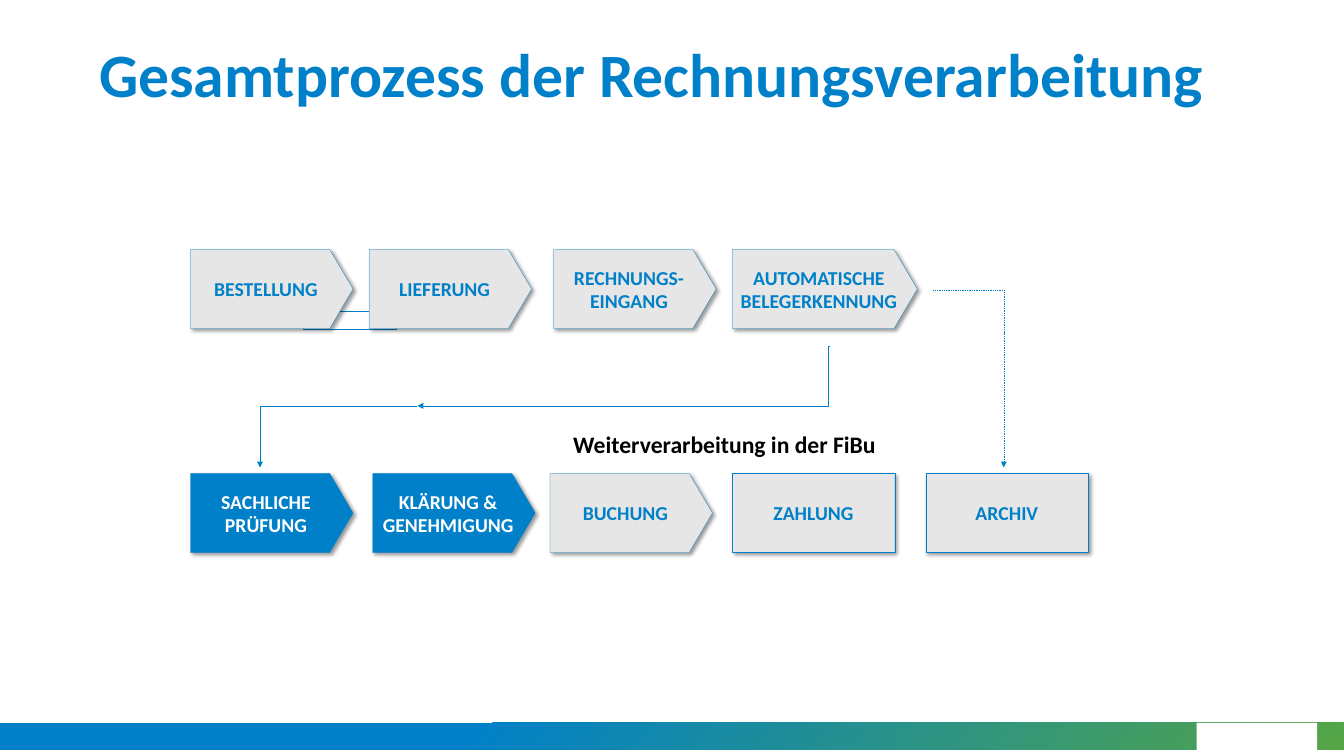
import pptx
import pptx.util
import pptx.dml.color
import pptx.enum.dml
import pptx.enum.shapes
import pptx.enum.text
import pptx.oxml
import pptx.oxml.ns
from pptx.util import Cm

BLUE = pptx.dml.color.RGBColor(0x00, 0x80, 0xC8)
GREEN = pptx.dml.color.RGBColor(0x55, 0xA5, 0x46)
GREY = pptx.dml.color.RGBColor(0xE7, 0xE6, 0xE6)
WHITE = pptx.dml.color.RGBColor(0xFF, 0xFF, 0xFF)
BLACK = pptx.dml.color.RGBColor(0x00, 0x00, 0x00)
SHAPE = pptx.enum.shapes.MSO_SHAPE
ALIGN = pptx.enum.text.PP_ALIGN
ANCHOR = pptx.enum.text.MSO_ANCHOR
NAMESPACE = pptx.oxml.ns.nsdecls("a")
SHADOW = (
    f'<a:outerShdw {NAMESPACE} blurRad="50800" dist="38100" dir="2700000" algn="tl" rotWithShape="0">'
    '<a:srgbClr val="000000"><a:alpha val="40000"/></a:srgbClr></a:outerShdw>'
)

presentation = pptx.Presentation()
presentation.slide_width = Cm(48.16)
presentation.slide_height = Cm(27.1)
slide = presentation.slides.add_slide(presentation.slide_layouts[5])


def add_box(preset, left, top, width, height, fill, line=None):
    shape = slide.shapes.add_shape(preset, Cm(left), Cm(top), Cm(width), Cm(height))
    shape.shadow.inherit = False
    shape.fill.solid()
    shape.fill.fore_color.rgb = fill
    if line is None:
        shape.line.fill.background()
    else:
        shape.line.color.rgb = line
        shape.line.width = pptx.util.Pt(0.25)
    return shape


def write_text(shape, text, size, color, alignment, anchor):
    frame = shape.text_frame
    frame.text = text
    frame.word_wrap = True
    frame.auto_size = pptx.enum.text.MSO_AUTO_SIZE.NONE
    frame.vertical_anchor = anchor
    font_format = {"name": "Calibri", "size": pptx.util.Pt(size), "bold": True}
    for paragraph in frame.paragraphs:
        paragraph.alignment = alignment
        for run in paragraph.runs:
            for attribute, value in font_format.items():
                setattr(run.font, attribute, value)
            run.font.color.rgb = color


# Footer band
footer = add_box(SHAPE.RECTANGLE, 0, 25.91, 48.16, 0.97, BLUE)
footer.fill.gradient()
footer.fill.gradient_angle = 320
for stop, (position, color) in zip(footer.fill.gradient_stops, [(0.35, BLUE), (1, GREEN)]):
    stop.position = position
    stop.color.rgb = color
add_box(SHAPE.RECTANGLE, 42.88, 25.91, 4.32, 0.97, WHITE)

# Title
title = slide.shapes.title
title.left, title.top, title.width, title.height = Cm(3.3), Cm(0), Cm(41.55), Cm(5.23)
write_text(title, "Gesamtprozess der Rechnungsverarbeitung", 62.6, BLUE, ALIGN.LEFT, ANCHOR.MIDDLE)

# Process steps
add_box(SHAPE.RECTANGLE, 10.85, 11.15, 3.35, 0.64, WHITE, BLUE)
UPPER_ROW, LOWER_ROW = 8.94, 16.97
STEP_WIDTH, STEP_HEIGHT = 5.82, 2.84
POINTED, FLAT = 0.295, 0
steps = [
    ("BESTELLUNG", 6.83, UPPER_ROW, STEP_WIDTH, POINTED, GREY, BLUE),
    ("LIEFERUNG", 13.23, UPPER_ROW, STEP_WIDTH, POINTED, GREY, BLUE),
    ("RECHNUNGS-EINGANG", 19.84, UPPER_ROW, STEP_WIDTH, POINTED, GREY, BLUE),
    ("AUTOMATISCHE BELEGERKENNUNG", 26.24, UPPER_ROW, 6.63, POINTED, GREY, BLUE),
    ("SACHLICHE PRÜFUNG", 6.83, LOWER_ROW, STEP_WIDTH, POINTED, BLUE, WHITE),
    ("KLÄRUNG &\nGENEHMIGUNG", 13.36, LOWER_ROW, STEP_WIDTH, POINTED, BLUE, WHITE),
    ("BUCHUNG", 19.71, LOWER_ROW, STEP_WIDTH, POINTED, GREY, BLUE),
    ("ZAHLUNG", 26.24, LOWER_ROW, STEP_WIDTH, FLAT, GREY, BLUE),
    ("ARCHIV", 33.17, LOWER_ROW, STEP_WIDTH, FLAT, GREY, BLUE),
]
for text, left, top, width, point, fill, color in steps:
    step = add_box(SHAPE.PENTAGON, left, top, width, STEP_HEIGHT, fill, BLUE)
    step.adjustments[0] = point
    effects = step.element.spPr.find(pptx.oxml.ns.qn("a:effectLst"))
    effects.append(pptx.oxml.parse_xml(SHADOW))
    write_text(step, text, 20, color, ALIGN.CENTER, ANCHOR.MIDDLE)

# Arrows between the rows: start, end, bend as thousandths of a percent, dashed
arrows = [
    ((33.45, 10.41), (35.97, 16.76), 100100, True),
    ((29.72, 12.42), (14.96, 14.55), 200, False),
    ((14.96, 14.55), (9.32, 16.76), 100100, False),
]
for start, end, bend, dashed in arrows:
    arrow = slide.shapes.add_connector(
        pptx.enum.shapes.MSO_CONNECTOR.ELBOW, *map(Cm, start), *map(Cm, end)
    )
    arrow.line.color.rgb = BLUE
    arrow.line.width = pptx.util.Pt(0.25)
    if dashed:
        arrow.line.dash_style = pptx.enum.dml.MSO_LINE.DASH
    properties = arrow.element.spPr
    guide = f'<a:gd {NAMESPACE} name="adj1" fmla="val {bend}"/>'
    geometry = properties.find(pptx.oxml.ns.qn("a:prstGeom"))
    geometry.get_or_add_avLst().append(pptx.oxml.parse_xml(guide))
    outline = properties.find(pptx.oxml.ns.qn("a:ln"))
    outline.append(pptx.oxml.parse_xml(f'<a:tailEnd {NAMESPACE} type="triangle"/>'))
    properties.append(pptx.oxml.parse_xml(f"<a:effectLst {NAMESPACE}/>"))

# Label above the accounting steps
label = slide.shapes.add_textbox(Cm(20.29), Cm(15.27), Cm(11.79), Cm(1.27))
write_text(label, "Weiterverarbeitung in der FiBu", 24, BLACK, ALIGN.LEFT, ANCHOR.TOP)

presentation.save("out.pptx")
